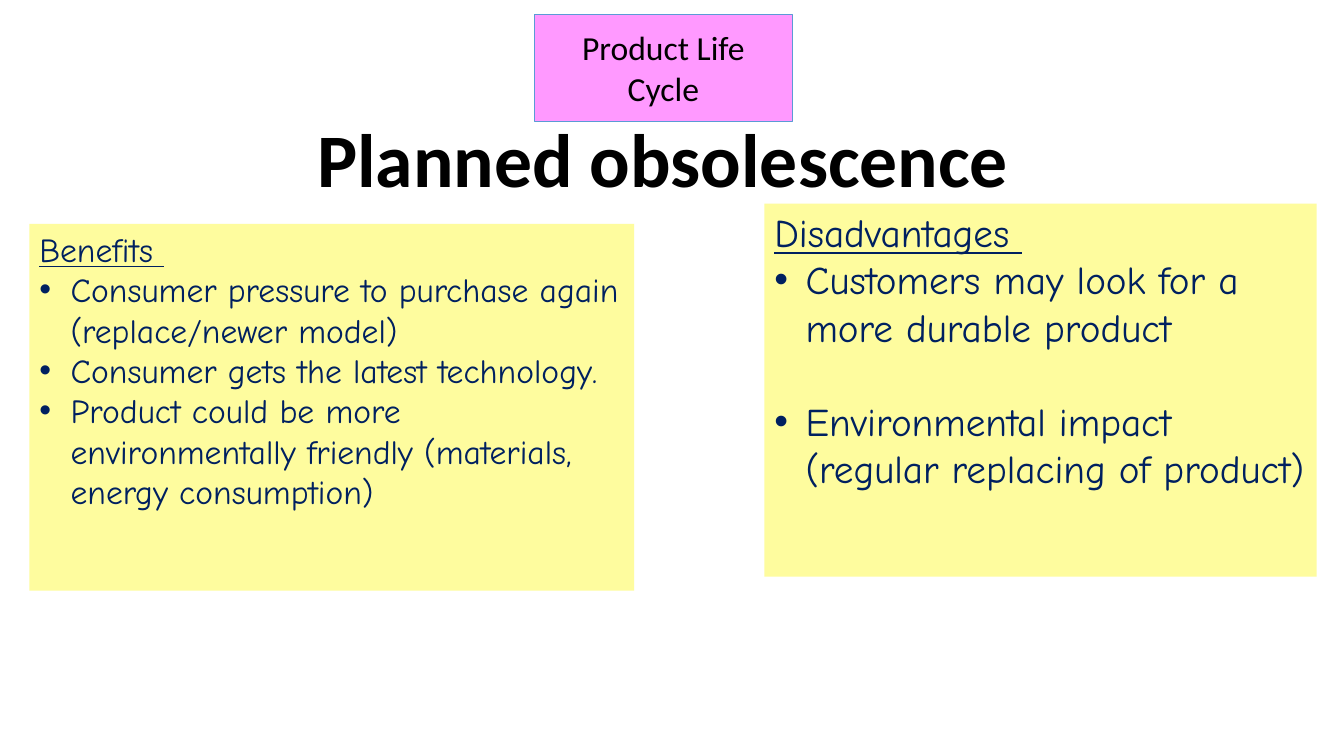
"""Build the planned obsolescence slide."""
import pptx
import pptx.dml.color
import pptx.enum.shapes
import pptx.enum.text
import pptx.oxml.ns
import lxml.etree
from pptx.util import Inches

RGBColor = pptx.dml.color.RGBColor
BLACK = RGBColor(0x00, 0x00, 0x00)
NAVY = RGBColor(0x00, 0x20, 0x60)
YELLOW = RGBColor(0xFE, 0xFC, 0x9E)
PINK = RGBColor(0xFF, 0x99, 0xFF)
BLUE = RGBColor(0x5B, 0x9B, 0xD5)
CENTER = pptx.enum.text.PP_ALIGN.CENTER
MIDDLE = pptx.enum.text.MSO_ANCHOR.MIDDLE


def place(shape, left, top, width, height):
    """Move and size a shape, in inches."""
    shape.left, shape.top = Inches(left), Inches(top)
    shape.width, shape.height = Inches(width), Inches(height)


def set_font(paragraph, name, size, color, bold=False):
    """Format all the text of a paragraph."""
    font = paragraph.font
    font.name, font.size, font.bold = name, pptx.util.Pt(size), bold
    font.color.rgb = color


def set_bullet(paragraph, character=None):
    """Give a paragraph a hanging bullet, or none."""
    properties = paragraph._p.get_or_add_pPr()
    indent = Inches(0.31) if character else 0
    properties.set("marL", str(indent))
    properties.set("indent", str(-indent))
    tag = "a:buChar" if character else "a:buNone"
    bullet = lxml.etree.SubElement(properties, pptx.oxml.ns.qn(tag))
    if character:
        bullet.set("char", character)


def fill_title(title, text):
    """Place and format the slide title."""
    place(title, 3.02, 1.06, 7.11, 1.01)
    frame = title.text_frame
    frame.text = text
    frame.word_wrap = False
    frame.auto_size = pptx.enum.text.MSO_AUTO_SIZE.NONE
    frame.vertical_anchor = MIDDLE
    frame.paragraphs[0].alignment = CENTER
    set_font(frame.paragraphs[0], "Calibri", 54, BLACK, bold=True)


def fill_panel(body, position, heading, points, size, gap=0):
    """Turn a body placeholder into a yellow panel with heading and bullets."""
    place(body, *position)
    body.fill.solid()
    body.fill.fore_color.rgb = YELLOW
    frame = body.text_frame
    frame.text = "\n".join([heading, *points])
    frame.word_wrap = True
    frame.auto_size = pptx.enum.text.MSO_AUTO_SIZE.NONE
    frame.vertical_anchor = pptx.enum.text.MSO_ANCHOR.TOP
    for index, paragraph in enumerate(frame.paragraphs):
        set_bullet(paragraph, "•" if index else None)
        paragraph.space_before = pptx.util.Pt(gap if index > 1 else 0)
        set_font(paragraph, "Comic Neue", size, NAVY)
        paragraph.font.underline = index == 0


def add_topic_label(slide, text):
    """Add the pink topic label above the title."""
    label = slide.shapes.add_shape(
        pptx.enum.shapes.MSO_SHAPE.RECTANGLE,
        Inches(5.3), Inches(0.14), Inches(2.56), Inches(1.06))
    label.shadow.inherit = False
    label.fill.solid()
    label.fill.fore_color.rgb = PINK
    label.line.color.rgb = BLUE
    label.line.width = pptx.util.Pt(0.5)
    frame = label.text_frame
    frame.text = text
    frame.word_wrap = True
    frame.vertical_anchor = MIDDLE
    frame.paragraphs[0].alignment = CENTER
    set_font(frame.paragraphs[0], "Calibri", 24, BLACK)


def main():
    """Create and save the slide."""
    presentation = pptx.Presentation()
    presentation.slide_width = Inches(13.33)
    presentation.slide_height = Inches(7.5)
    layout = presentation.slide_layouts.get_by_name("Two Content")
    slide = presentation.slides.add_slide(layout)
    fill_title(slide.shapes.title, "Planned obsolescence")
    fill_panel(slide.placeholders[1], (0.29, 2.22, 6, 3.64), "Benefits ", [
        "Consumer pressure to purchase again (replace/newer model)",
        "Consumer gets the latest technology.",
        "Product could be more environmentally friendly "
        "(materials, energy consumption)",
    ], size=24)
    fill_panel(slide.placeholders[2], (7.58, 2.02, 5.48, 3.7), "Disadvantages ", [
        "Customers may look for a more durable product",
        "Environmental impact (regular replacing of product)",
    ], size=28, gap=34)
    add_topic_label(slide, "Product Life Cycle")
    presentation.save("out.pptx")


if __name__ == "__main__":
    main()
